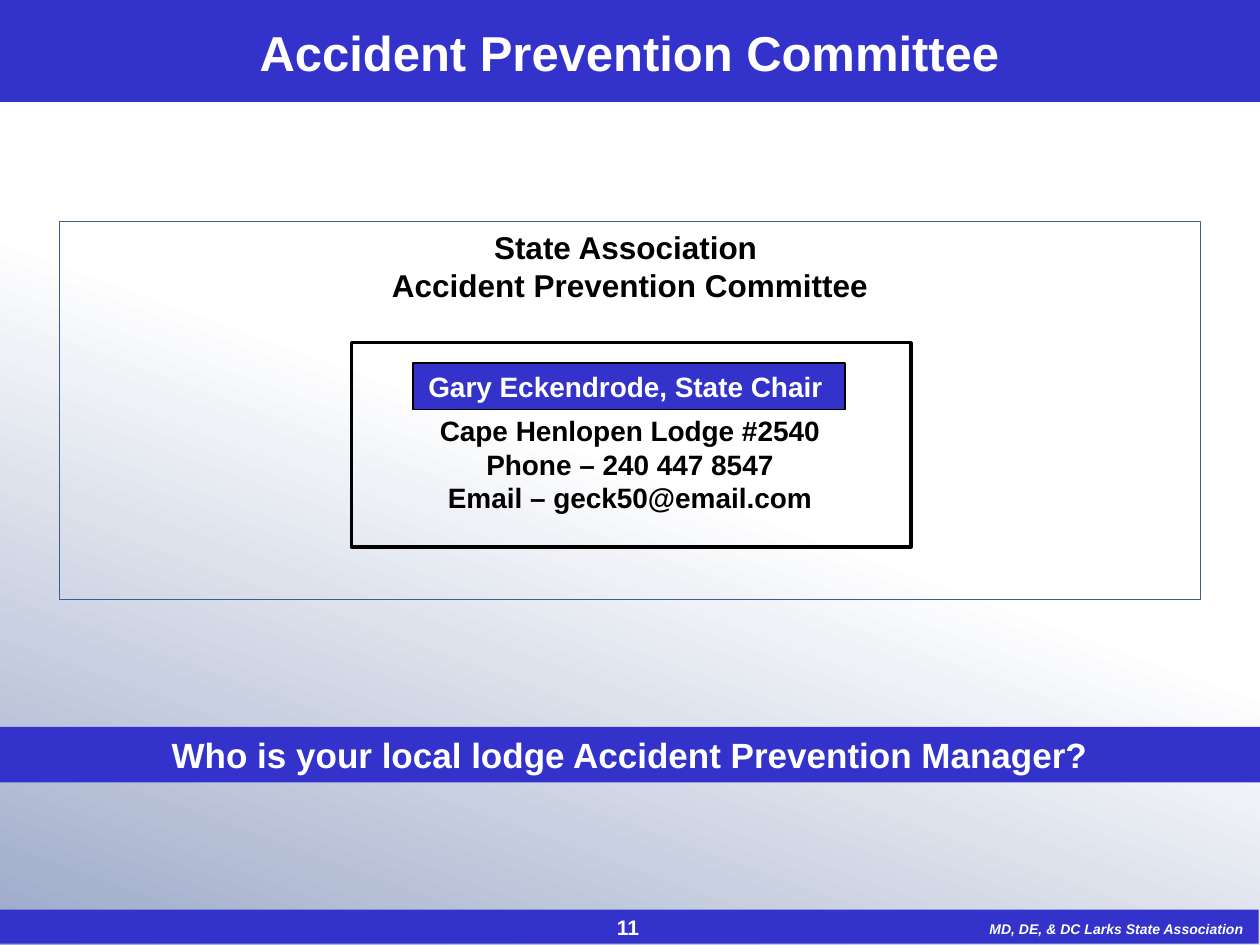
import pptx
import pptx.dml.color
import pptx.enum.shapes
import pptx.enum.text
import pptx.util

Inches, Pt = pptx.util.Inches, pptx.util.Pt
RGBColor = pptx.dml.color.RGBColor
MSO_ANCHOR = pptx.enum.text.MSO_ANCHOR
PP_ALIGN = pptx.enum.text.PP_ALIGN

BLUE = RGBColor(0x33, 0x33, 0xCC)
MIST = RGBColor(0x9C, 0xA9, 0xC8)
STEEL = RGBColor(0x3A, 0x5F, 0x8C)
WHITE = RGBColor(0xFF, 0xFF, 0xFF)
BLACK = RGBColor(0, 0, 0)

TITLE = "Accident Prevention Committee"
COMMITTEE = ["State Association ", "Accident Prevention Committee"]
CONTACT = ["Cape Henlopen Lodge #2540", "Phone – 240 447 8547", "Email – geck50@email.com"]
CHAIR = "Gary Eckendrode, State Chair "
QUESTION = "Who is your local lodge Accident Prevention Manager?"
ASSOCIATION = "MD, DE, & DC Larks State Association"
PAGE = "11"


def add_box(place, fill=None, line=None, line_width=1):
    box = slide.shapes.add_shape(
        pptx.enum.shapes.MSO_SHAPE.RECTANGLE, *map(Inches, place))
    box.shadow.inherit = False
    if fill is None:
        box.fill.background()
    else:
        box.fill.solid()
        box.fill.fore_color.rgb = fill
    if line is None:
        box.line.fill.background()
    else:
        box.line.color.rgb = line
        box.line.width = Pt(line_width)
    return box


def write(shape, lines, color=WHITE, align=PP_ALIGN.CENTER,
          anchor=MSO_ANCHOR.MIDDLE, wrap=True, italic=False):
    frame = shape.text_frame
    frame.word_wrap = wrap
    frame.vertical_anchor = anchor
    frame.text = "\n".join(text for text, size in lines)
    for paragraph, (text, size) in zip(frame.paragraphs, lines):
        paragraph.alignment = align
        font = paragraph.font
        font.name, font.size, font.bold, font.italic = "Arial", Pt(size), True, italic
        font.color.rgb = color
    return frame


deck = pptx.Presentation()
deck.slide_width, deck.slide_height = Inches(10), Inches(7.5)
slide = deck.slides.add_slide(deck.slide_layouts[5])

backdrop = slide.background.fill
backdrop.gradient()
backdrop.gradient_angle = 70
for stop, (position, color) in zip(backdrop.gradient_stops, [(0, MIST), (0.51, WHITE)]):
    stop.position = position
    stop.color.rgb = color

header = add_box((0, 0, 10, 0.81), BLUE)
footer = add_box((-0.01, 7.22, 10, 0.27), BLUE)

title = slide.shapes.title
title.left, title.top, title.width, title.height = map(Inches, (0.74, 0, 8.51, 0.82))
write(title, [(TITLE, 28)])
slide.shapes._spTree.append(title._element)

association = slide.shapes.add_textbox(*map(Inches, (7.67, 7.26, 2.3, 0.24)))
write(association, [(ASSOCIATION, 8)], align=PP_ALIGN.RIGHT,
      anchor=MSO_ANCHOR.TOP, wrap=False, italic=True)

committee = add_box((0.47, 1.76, 9.06, 3), line=STEEL, line_width=0.75)
committee_text = write(
    committee,
    [(text, 18) for text in COMMITTEE] + [(text, 16) for text in CONTACT],
    color=BLACK, anchor=MSO_ANCHOR.TOP)
committee_text.paragraphs[len(COMMITTEE)].space_before = Pt(63)

page = slide.shapes.add_textbox(*map(Inches, (3.82, 7.22, 2.33, 0.28)))
write(page, [(PAGE, 12)])

chair = add_box((3.28, 2.88, 3.43, 0.37), BLUE, BLACK)
write(chair, [(CHAIR, 16)], wrap=False)

question = add_box((0, 5.77, 10, 0.44), BLUE)
write(question, [(QUESTION, 20)], anchor=MSO_ANCHOR.TOP)

contact_frame = add_box((2.79, 2.72, 4.44, 1.62), line=BLACK, line_width=2)

deck.save("out.pptx")
